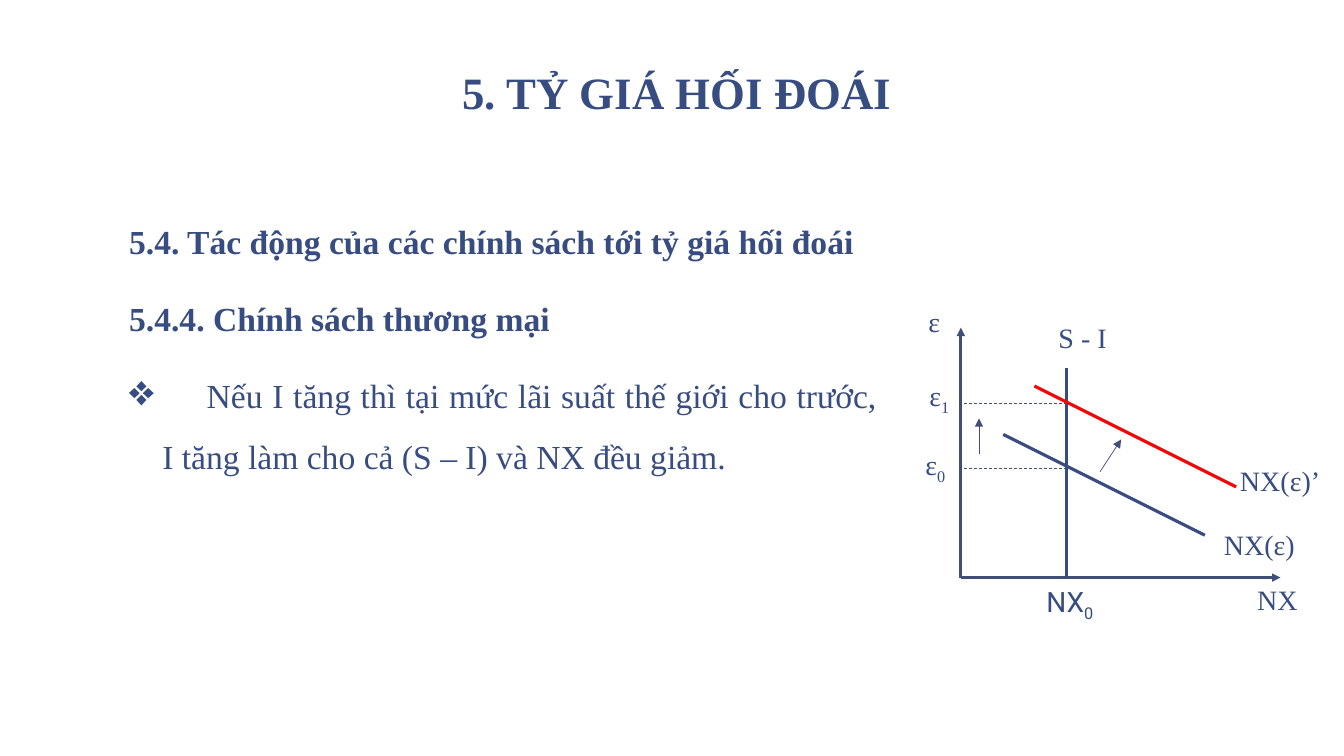
import pptx
import pptx.util
import pptx.dml.color
import pptx.enum.dml
import pptx.enum.shapes
import pptx.enum.text
import pptx.oxml.ns
from dataclasses import dataclass

Inches, Pt = pptx.util.Inches, pptx.util.Pt
RGB = pptx.dml.color.RGBColor.from_string
ALIGN = pptx.enum.text.PP_ALIGN
ANCHOR = pptx.enum.text.MSO_ANCHOR
FIT = pptx.enum.text.MSO_AUTO_SIZE
qn = pptx.oxml.ns.qn


@dataclass(frozen=True)
class Theme:
    ink: str = "374C81"
    axis: str = "414E77"
    shifted: str = "FF0000"
    serif: str = "Times New Roman"
    sans: str = "Roboto"
    title: int = 32
    body: int = 24
    label: int = 20
    curve_width: float = 2.25
    axis_width: float = 2
    thin_width: float = 0.5


THEME = Theme()


def set_all(obj, values):
    for name, value in values.items():
        setattr(obj, name, value)


def child(parent, tag, **attrs):
    el = parent.makeelement(qn(tag), attrs)
    parent.append(el)
    return el


def add_frame(s, left, top, width, height, **values):
    sp = s.shapes.add_textbox(*map(Inches, (left, top, width, height)))
    set_all(sp.text_frame, dict(word_wrap=True) | values)
    return sp.text_frame


def add_run(p, text, size, font=THEME.serif, bold=False):
    r = p.add_run()
    r.text = text
    set_all(r.font, dict(name=font, size=Pt(size), bold=bold))
    r.font.color.rgb = RGB(THEME.ink)
    return r


WIDE_MARGINS = dict(margin_left=Inches(0.13), margin_right=Inches(0.13),
                    margin_top=Inches(0.07), margin_bottom=Inches(0.07))


def add_title(s, box, text):
    tf = add_frame(s, *box, vertical_anchor=ANCHOR.BOTTOM, **WIDE_MARGINS)
    p = tf.paragraphs[0]
    set_all(p, dict(alignment=ALIGN.CENTER, line_spacing=1.5))
    add_run(p, text, THEME.title, bold=True)


def add_bullet(p):
    """Hang the paragraph on a diamond bullet, with a tab stop for its text."""
    pPr = p._p.get_or_add_pPr()
    hang = Inches(0.33)
    pPr.set("marL", str(hang))
    pPr.set("indent", str(-hang))
    child(pPr, "a:buSzPct", val="130000")
    child(pPr, "a:buChar", char="❖")
    tabs = child(pPr, "a:tabLst")
    child(tabs, "a:tab", pos=str(Inches(0.77)), algn="l")


def add_body(s, box, headings, point):
    tf = add_frame(s, *box, **WIDE_MARGINS)
    for i, text in enumerate([*headings, point]):
        p = tf.add_paragraph() if i else tf.paragraphs[0]
        p.line_spacing = 1.5
        if i:
            p.space_before = Pt(12)
        if text is point:
            p.alignment = ALIGN.JUSTIFY
            add_bullet(p)
            text = "\t" + text
        add_run(p, text, THEME.body, bold=text in headings)


def add_line(s, start, end, color, width, dash=False, arrow=False):
    ln = s.shapes.add_connector(pptx.enum.shapes.MSO_CONNECTOR.STRAIGHT,
                                *map(Inches, (*start, *end)))
    ln.line.color.rgb = RGB(color)
    ln.line.width = Pt(width)
    if dash:
        ln.line.dash_style = pptx.enum.dml.MSO_LINE.DASH
    if arrow:
        child(ln.line._get_or_add_ln(), "a:tailEnd", type="triangle")
    child(ln._element.spPr, "a:effectLst")


def add_label(s, box, text, sub="", font=THEME.serif, exact=True):
    tf = add_frame(s, *box, auto_size=FIT.SHAPE_TO_FIT_TEXT)
    p = tf.paragraphs[0]
    if exact:
        set_all(p, dict(alignment=ALIGN.JUSTIFY, line_spacing=Pt(33)))
    add_run(p, text, THEME.label, font)
    if sub:
        r = add_run(p, sub, THEME.label, font)
        r.font._element.set("baseline", "-25000")


def add_graph(s, box):
    """Net exports against the real exchange rate, before and after the shift."""
    left, top, width, height = box
    bottom = top + height
    supply = left + 1.05

    def at(x, y):
        return left + x, bottom - y

    axis = dict(color=THEME.axis, width=THEME.axis_width, arrow=True)
    thin = dict(color=THEME.axis, width=THEME.thin_width)
    add_line(s, at(0, 0), (left, top), **axis)
    add_line(s, at(0, 0), (left + width, bottom), **axis)
    add_line(s, (supply, bottom), (supply, top + 0.4), THEME.ink, THEME.curve_width)
    for x, y, color in ((0.42, 1.42, THEME.ink), (0.73, 1.9, THEME.shifted)):
        add_line(s, at(x, y), at(x + 2, y - 1), color, THEME.curve_width)
    for rate in (1.08, 1.73):
        add_line(s, at(1.05, rate), at(0, rate), dash=True, **thin)
    for start, end in (((1.38, 1.05), (1.59, 1.37)), ((0.18, 1.23), (0.18, 1.58))):
        add_line(s, at(*start), at(*end), arrow=True, **thin)

    for x, y, w, h, text, sub in (
            (-0.42, 2.88, 0.5, 0.56, "ε", ""),
            (-0.41, 2.1, 0.5, 0.51, "ε", "1"),
            (-0.45, 1.42, 0.5, 0.51, "ε", "0"),
            (0.87, 2.72, 0.9, 0.56, "S - I", ""),
            (2.67, 1.31, 1.01, 0.56, "NX(ε)’", ""),
            (2.51, 0.67, 1.01, 0.56, "NX(ε)", "")):
        add_label(s, (*at(x, y), w, h), text, sub)
    add_label(s, (*at(0.75, -0.02), 0.84, 0.44), "NX", "0", THEME.sans, exact=False)
    add_label(s, (*at(2.84, 0), 0.67, 0.44), "NX", exact=False)


def main():
    prs = pptx.Presentation()
    set_all(prs, dict(slide_width=Inches(13.33), slide_height=Inches(7.5)))
    s = prs.slides.add_slide(prs.slide_layouts[6])
    add_title(s, (1.16, 0, 11.11, 1.25), "5. TỶ GIÁ HỐI ĐOÁI")
    add_body(s, (1.15, 1.92, 7.68, 4.09),
             ["5.4. Tác động của các chính sách tới tỷ giá hối đoái",
              "5.4.4. Chính sách thương mại"],
             "Nếu I tăng thì tại mức lãi suất thế giới cho trước, "
             "I tăng làm cho cả (S – I) và NX đều giảm.")
    add_graph(s, (9.53, 3.25, 3.17, 2.48))
    prs.save("out.pptx")


if __name__ == "__main__":
    main()
